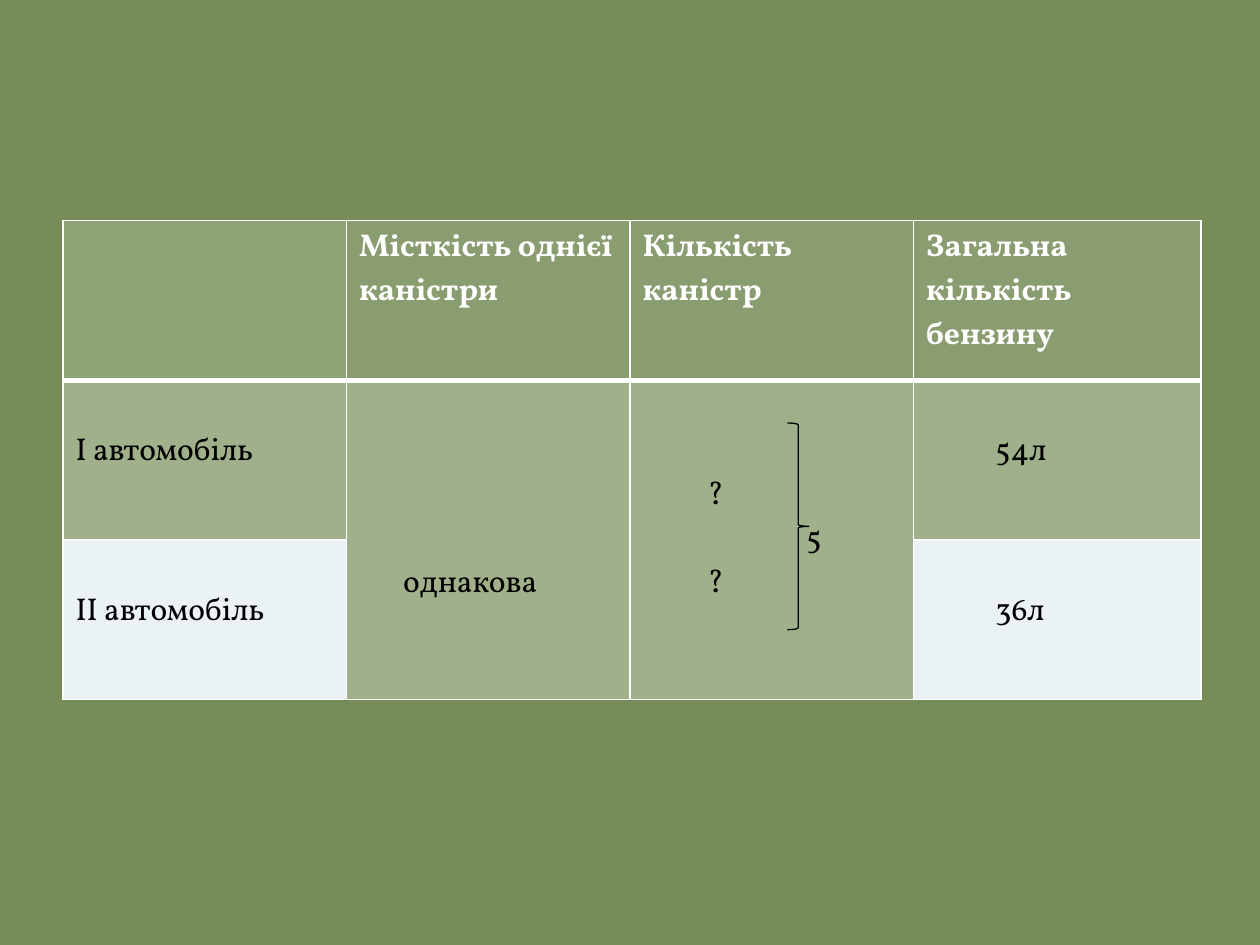
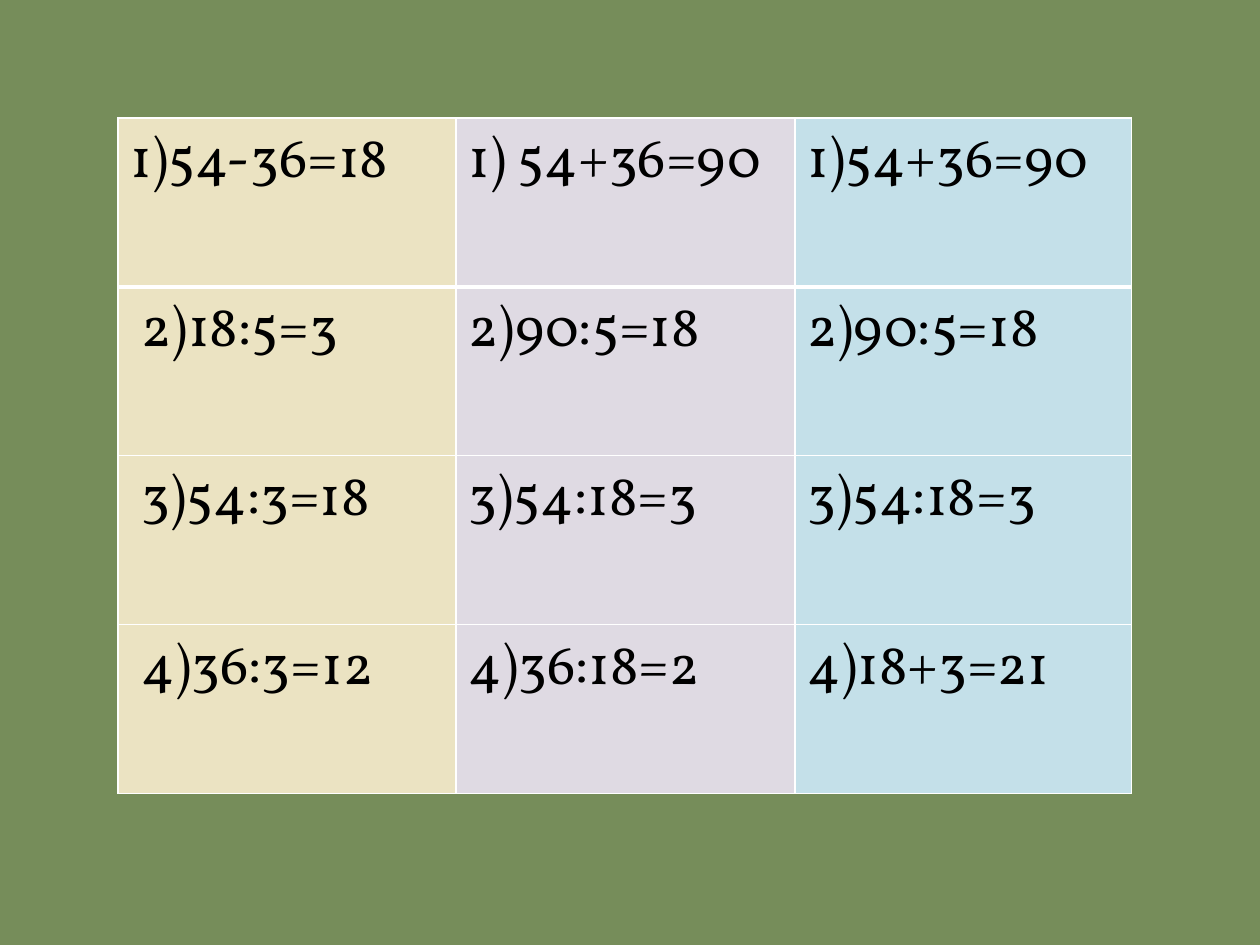
"""Build two slides: a table of fuel canisters and a table of solutions."""
from dataclasses import dataclass

from lxml import etree
from pptx import Presentation
from pptx.dml.color import RGBColor
from pptx.enum.shapes import MSO_SHAPE
from pptx.oxml.ns import qn
from pptx.util import Emu, Inches, Pt

BRACE = MSO_SHAPE.RIGHT_BRACE
UNIT = Inches(0.25)


@dataclass(frozen=True)
class Theme:
    font: str = "Vollkorn"
    back: str = "768D5A"
    white: str = "FFFFFF"
    black: str = "000000"
    corner: str = "9CB084"
    sage: str = "C4D0B5"
    pale: str = "EBF2F5"
    columns: tuple = ("EBE3C2", "DFDAE3", "C4E0E9")
    body_pt: int = 18
    sum_pt: int = 32
    thin_pt: int = 1
    thick_pt: int = 3
    brace_pt: float = 0.75


T = Theme()


def add_grid(slide, left, top, widths, heights):
    box = [Emu(int(v * UNIT)) for v in (left, top, sum(widths), sum(heights))]
    tbl = slide.shapes.add_table(len(heights), len(widths), *box).table
    tbl.first_row = tbl.horz_banding = False
    for col, width in zip(tbl.columns, widths):
        col.width = Emu(int(width * UNIT))
    for row, height in zip(tbl.rows, heights):
        row.height = Emu(int(height * UNIT))
    for r in range(len(heights)):
        for c in range(len(widths)):
            tc_pr = tbl.cell(r, c)._tc.get_or_add_tcPr()
            for side in ("lnL", "lnR", "lnT", "lnB"):
                thick = (r, side) in ((0, "lnB"), (1, "lnT"))
                width = Pt(T.thick_pt if thick else T.thin_pt)
                ln = etree.SubElement(tc_pr, qn(f"a:{side}"), w=str(width))
                fill = etree.SubElement(ln, qn("a:solidFill"))
                etree.SubElement(fill, qn("a:srgbClr"), val=T.white)
    return tbl


def fill_cell(cell, lines, size, color, fill, alpha=100, skip=0, bold=False):
    cell.fill.solid()
    cell.fill.fore_color.rgb = RGBColor.from_string(fill)
    if alpha < 100:
        clr = cell._tc.tcPr.find(qn("a:solidFill")).find(qn("a:srgbClr"))
        etree.SubElement(clr, qn("a:alpha"), val=str(alpha * 1000))
    cell.margin_top = Emu(int(Inches(0.05) + skip * 1.4 * UNIT))
    tf = cell.text_frame
    for i, (text, indent) in enumerate(lines):
        p = tf.add_paragraph() if i else tf.paragraphs[0]
        p_pr = p._p.get_or_add_pPr()
        p_pr.set("marL", str(int(indent * UNIT)))
        p_pr.set("indent", "0")
        r = p.add_run()
        r.text = text
        r.font.name, r.font.size, r.font.bold = T.font, Pt(size), bold
        r.font.color.rgb = RGBColor.from_string(color)


prs = Presentation()
prs.slide_width, prs.slide_height = 40 * UNIT, 30 * UNIT
slides = [prs.slides.add_slide(prs.slide_layouts[6]) for _ in range(2)]
for s in slides:
    s.background.fill.solid()
    s.background.fill.fore_color.rgb = RGBColor.from_string(T.back)

s = slides[0]
tbl = add_grid(s, 2, 7, [9, 9, 9, 9.12], [5.07] * 3)
for c in (1, 2):
    tbl.cell(1, c).merge(tbl.cell(2, c))

fill_cell(tbl.cell(0, 0), [], T.body_pt, T.white, T.corner, 63)
heads = ["Місткість однієї каністри", "Кількість каністр", "Загальна кількість бензину"]
for c, head in enumerate(heads, 1):
    fill_cell(tbl.cell(0, c), [(head, 0)], T.body_pt, T.white, T.sage, 25, bold=True)

cars = [("І автомобіль", "54л", T.sage, 53), ("ІІ автомобіль", "36л", T.pale, 100)]
for r, (car, litres, fill, alpha) in enumerate(cars, 1):
    for c, line in ((0, (car, 0)), (3, (litres, 2.2))):
        fill_cell(tbl.cell(r, c), [line], T.body_pt, T.black, fill, alpha, skip=1)

shared = [
    (1, [("однакова", 1.4)], 4),
    (2, [("?", 2.05), ("5", 5.2), ("?", 2.05)], 2),
]
for c, lines, skip in shared:
    fill_cell(tbl.cell(1, c), lines, T.body_pt, T.black, T.sage, 53, skip)

box = [Emu(int(v * UNIT)) for v in (25, 13.43, 0.68, 6.56)]
sp = s.shapes.add_shape(BRACE, *box)
sp.shadow.inherit = False
sp.fill.background()
sp.line.color.rgb = RGBColor.from_string(T.black)
sp.line.width = Pt(T.brace_pt)

sums = [
    ["1)54-36=18", "1) 54+36=90", "1)54+36=90"],
    ["2)18:5=3", "2)90:5=18", "2)90:5=18"],
    ["3)54:3=18", "3)54:18=3", "3)54:18=3"],
    ["4)36:3=12", "4)36:18=2", "4)18+3=21"],
]
tbl = add_grid(slides[1], 3.75, 3.75, [10.73, 10.76, 10.69], [5.36] * 4)
for r, row in enumerate(sums):
    for c, text in enumerate(row):
        indent = 0.35 if r and c == 0 else 0
        fill_cell(tbl.cell(r, c), [(text, indent)], T.sum_pt, T.black, T.columns[c])

prs.save("out.pptx")
